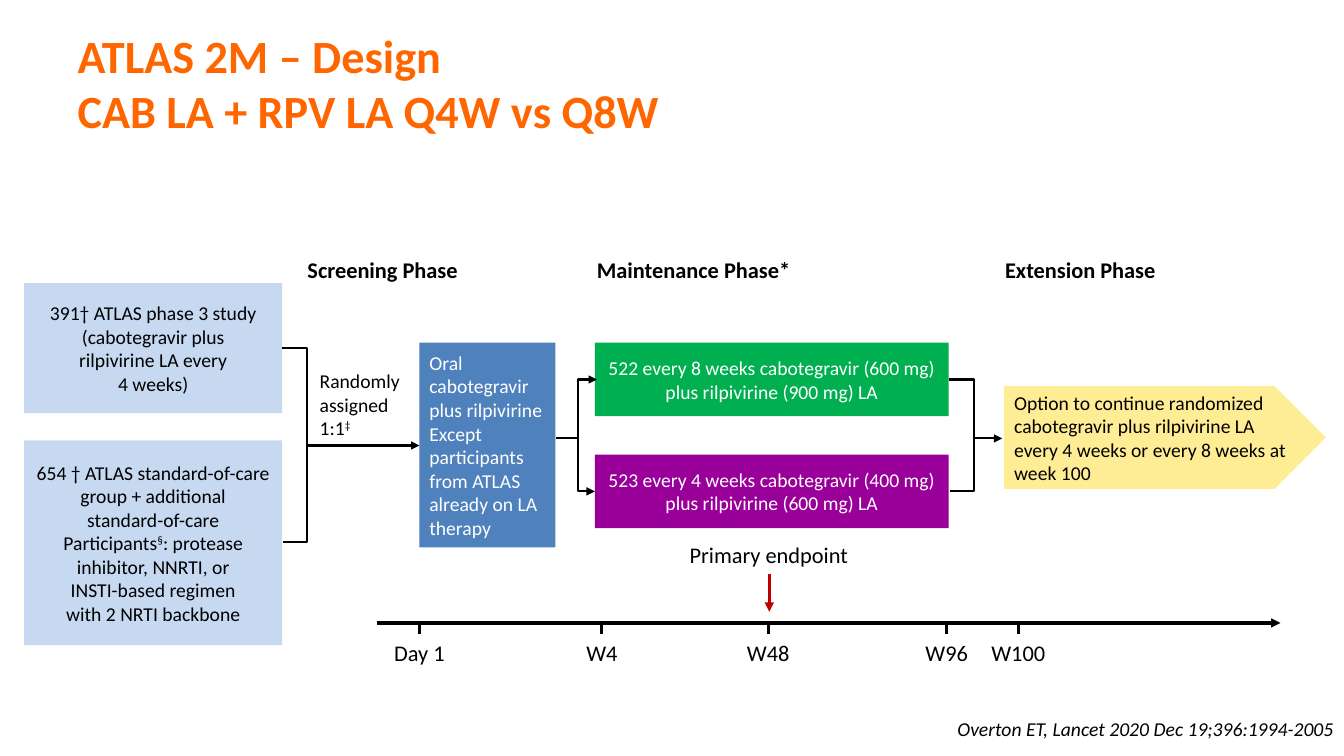
"""Builds the ATLAS 2M study design slide with its flow diagram and timeline."""
from lxml.etree import SubElement
from pptx import Presentation
from pptx.dml.color import RGBColor
from pptx.enum.shapes import MSO_CONNECTOR, MSO_SHAPE
from pptx.enum.text import MSO_ANCHOR, PP_ALIGN
from pptx.oxml.ns import qn
from pptx.util import Inches, Pt

LEFT, CENTER, RIGHT = PP_ALIGN.LEFT, PP_ALIGN.CENTER, PP_ALIGN.RIGHT
GROUP_LEFT, GROUP_WIDTH = 0.24, 2.56
GROUP_RIGHT = GROUP_LEFT + GROUP_WIDTH
JOIN, DAY_1, ORAL_RIGHT, SPLIT = 3.05, 4.16, 5.51, 5.73
ARM_LEFT, ARM_WIDTH, ARM_HEIGHT = 5.9, 3.51, 0.73
ARM_RIGHT, MERGE, EXTENSION = ARM_LEFT + ARM_WIDTH, 9.66, 9.96
HEADING_ROW, ARM_ROW, ARM_STEP, AXIS_ROW = 2.54, 3.4, 1.11, 6.18
ARM_MIDDLE = ARM_ROW + ARM_HEIGHT / 2
FLOW_ROW = 4.35

presentation = Presentation()
presentation.slide_width, presentation.slide_height = Inches(13.33), Inches(7.5)
slide = presentation.slides.add_slide(presentation.slide_layouts[5])


def write(shape, text, size, color="000000", align=LEFT, bold=False, italic=False, margin=None, wrap=True):
    """Fills a shape: newline parts paragraphs, \\v breaks lines, carets enclose superscripts."""
    frame = shape.text_frame
    frame.word_wrap = wrap
    if margin is not None:
        frame.margin_left = frame.margin_right = frame.margin_top = frame.margin_bottom = margin
    frame.text = text
    for paragraph in frame.paragraphs:
        paragraph.alignment = align
        first, *others = paragraph.text.split("^")
        paragraph.text = first
        for index, part in enumerate(others):
            run = paragraph.add_run()
            run.text = part
            if index % 2 == 0:
                run.font._element.set("baseline", "30000")
        for run in paragraph.runs:
            font = run.font
            font.name, font.size, font.bold, font.italic = "Calibri", Pt(size), bold, italic
            font.color.rgb = RGBColor.from_string(color)


def connect(start, end, width=1.5, color="000000", arrows=(), bend=None):
    """Draws a line, or an elbow whose upright stands at bend, with the named arrow ends."""
    kind = MSO_CONNECTOR.STRAIGHT if bend is None else MSO_CONNECTOR.ELBOW
    connector = slide.shapes.add_connector(kind, *map(Inches, start + end))
    connector.line.width = Pt(width)
    connector.line.color.rgb = RGBColor.from_string(color)
    properties = connector._element.spPr
    for arrow in arrows:
        SubElement(properties.find(qn("a:ln")), qn("a:" + arrow), type="triangle")
    SubElement(properties, qn("a:effectLst"))
    if bend is not None:
        share = round((bend - start[0]) / (end[0] - start[0]) * 100000)
        guides = properties.find(qn("a:prstGeom")).find(qn("a:avLst"))
        SubElement(guides, qn("a:gd"), name="adj1", fmla=f"val {share}")


title = slide.shapes.title
title.left, title.top, title.width, title.height = map(Inches, (0.67, 0.01, 9.26, 1.62))
title.text_frame.vertical_anchor = MSO_ANCHOR.MIDDLE
write(title, "ATLAS 2M – Design\vCAB LA + RPV LA Q4W vs Q8W", 33, "FF6600", bold=True)

boxes = [
    (MSO_SHAPE.RECTANGLE, GROUP_LEFT, 2.81, GROUP_WIDTH, 1.29, "C6D9F1", "000000", CENTER,
     "391† ATLAS phase 3 study\n(cabotegravir plus\vrilpivirine LA every\n4 weeks)"),
    (MSO_SHAPE.RECTANGLE, GROUP_LEFT, 4.37, GROUP_WIDTH, 2.03, "C6D9F1", "000000", CENTER,
     "654 † ATLAS standard-of-care\ngroup + additional\nstandard-of-care\nParticipants^§^: protease\n"
     "inhibitor, NNRTI, or\nINSTI-based regimen\nwith 2 NRTI backbone"),
    (MSO_SHAPE.RECTANGLE, DAY_1, ARM_ROW, ORAL_RIGHT - DAY_1, 2.03, "4F81BD", "FFFFFF", LEFT,
     "Oral\vcabotegravir\vplus rilpivirine\vExcept\vparticipants\vfrom ATLAS\valready on LA\vtherapy"),
    (MSO_SHAPE.RECTANGLE, ARM_LEFT, ARM_ROW, ARM_WIDTH, ARM_HEIGHT, "00B050", "FFFFFF", CENTER,
     "522 every 8 weeks cabotegravir (600 mg)\nplus rilpivirine (900 mg) LA"),
    (MSO_SHAPE.RECTANGLE, ARM_LEFT, ARM_ROW + ARM_STEP, ARM_WIDTH, ARM_HEIGHT, "990099", "FFFFFF", CENTER,
     "523 every 4 weeks cabotegravir (400 mg)\nplus rilpivirine (600 mg) LA"),
    (MSO_SHAPE.PENTAGON, EXTENSION, 3.83, 3.19, 1.02, "FFED95", "000000", LEFT,
     "Option to continue randomized\vcabotegravir plus rilpivirine LA\v"
     "every 4 weeks or every 8 weeks at\vweek 100"),
]
for kind, left, top, width, height, fill, color, align, text in boxes:
    box = slide.shapes.add_shape(kind, *map(Inches, (left, top, width, height)))
    box.shadow.inherit = False
    box.fill.solid()
    box.fill.fore_color.rgb = RGBColor.from_string(fill)
    box.line.fill.background()
    box.text_frame.vertical_anchor = MSO_ANCHOR.MIDDLE
    write(box, text, 14, color, align)

headings = [
    ("Screening Phase", JOIN, 1.93, LEFT),
    ("Maintenance Phase*", 5.91, 1.94, CENTER),
    ("Extension Phase", EXTENSION, 1.51, CENTER),
]
for text, left, width, align in headings:
    heading = slide.shapes.add_textbox(*map(Inches, (left, HEADING_ROW, width, 0.27)))
    write(heading, text, 16, align=align, bold=True, margin=0, wrap=False)

randomization = slide.shapes.add_textbox(*map(Inches, (3.17, 3.66, 0.99, 0.71)))
write(randomization, "Randomly\vassigned\v1:1^‡^", 14, margin=0)

connect((GROUP_RIGHT, 3.45), (GROUP_RIGHT + 0.01, 5.38), bend=JOIN)
connect((JOIN, 4.42), (DAY_1, 4.42), arrows=["tailEnd"])
connect((ORAL_RIGHT, FLOW_ROW), (SPLIT, FLOW_ROW))
connect((ARM_LEFT + 0.02, ARM_MIDDLE), (ARM_LEFT, ARM_MIDDLE + ARM_STEP),
        arrows=["headEnd", "tailEnd"], bend=SPLIT)
connect((ARM_RIGHT, ARM_MIDDLE), (ARM_RIGHT + 0.01, ARM_MIDDLE + ARM_STEP), bend=MERGE)
connect((MERGE, FLOW_ROW), (EXTENSION - 0.02, FLOW_ROW), arrows=["tailEnd"])

connect((3.74, AXIS_ROW), (12.7, AXIS_ROW), 2.25, arrows=["tailEnd"])
visits = [("Day 1", DAY_1), ("W4", 5.97), ("W48", 7.62), ("W96", 9.39), ("W100", 10.1)]
for text, middle in visits:
    connect((middle, AXIS_ROW), (middle, AXIS_ROW + 0.11), 2.25)
    label = slide.shapes.add_textbox(*map(Inches, (middle - 0.37, AXIS_ROW + 0.11, 0.74, 0.37)))
    write(label, text, 16, align=CENTER, wrap=False)

endpoint = slide.shapes.add_textbox(*map(Inches, (6.73, 5.32, 1.79, 0.37)))
write(endpoint, "Primary endpoint", 16, align=CENTER, wrap=False)
connect((7.63, 5.69), (7.63, 6.07), 2.25, "C00000", ["tailEnd"])

reference = slide.shapes.add_textbox(*map(Inches, (9.32, 7.06, 4.01, 0.34)))
write(reference, "Overton ET, Lancet 2020 Dec 19;396:1994-2005", 14, align=RIGHT, italic=True, wrap=False)

presentation.save("out.pptx")
